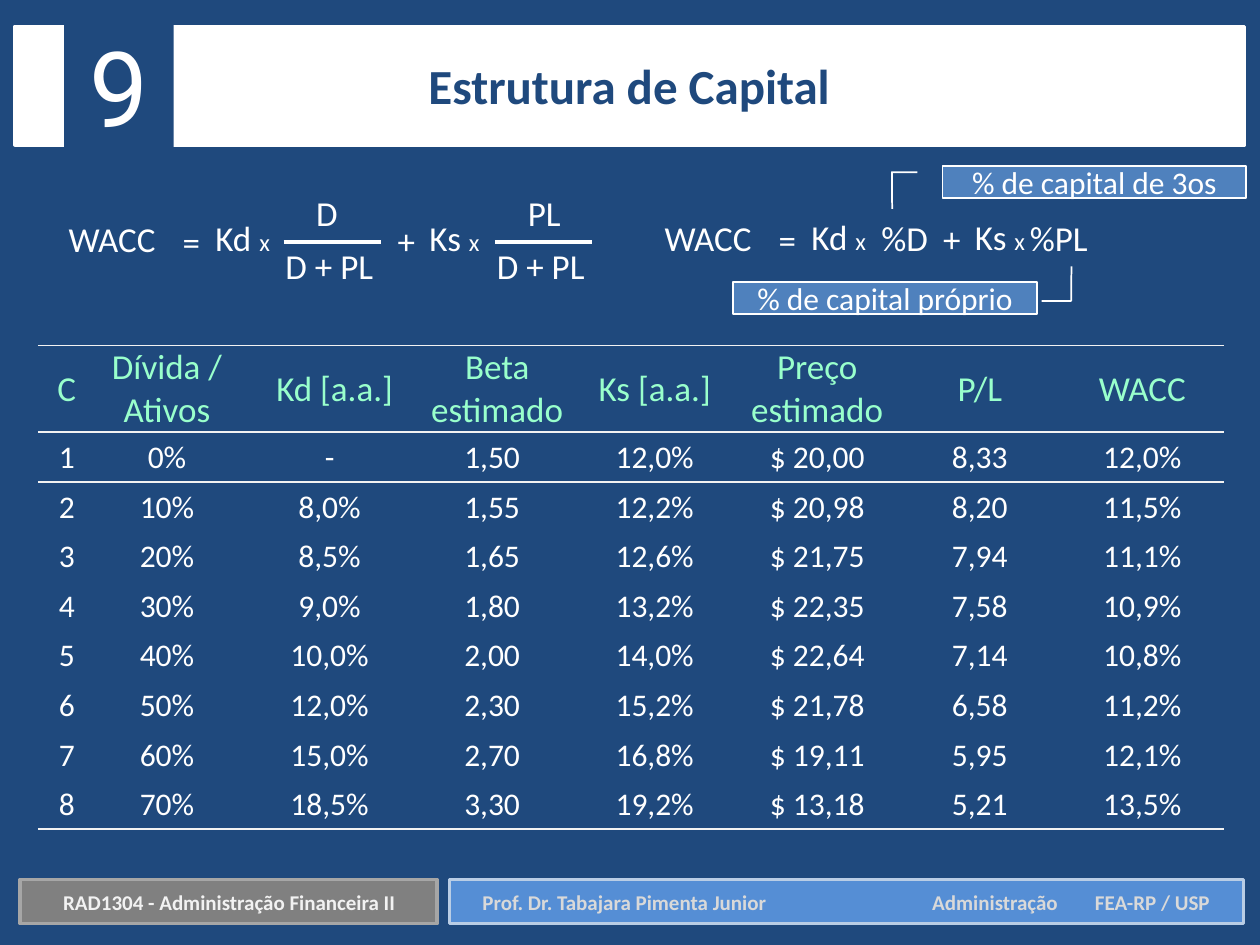
from lxml import etree
from pptx import Presentation
from pptx.dml.color import RGBColor
from pptx.enum.shapes import MSO_CONNECTOR, MSO_SHAPE
from pptx.enum.text import MSO_ANCHOR, PP_ALIGN
from pptx.oxml.ns import qn
from pptx.util import Pt

RECTANGLE, CALLOUT = MSO_SHAPE.RECTANGLE, MSO_SHAPE.LINE_CALLOUT_2
STRAIGHT = MSO_CONNECTOR.STRAIGHT
LEFT, CENTER = PP_ALIGN.LEFT, PP_ALIGN.CENTER
TOP, MIDDLE = MSO_ANCHOR.TOP, MSO_ANCHOR.MIDDLE
NO_STYLE = "{2D5ABB26-0587-4C30-8999-92F81FD0307C}"

THEME = {
    "font": "Calibri", "number_font": "Roboto",
    "navy": "1F497D", "white": "FFFFFF", "mint": "99FFCC", "rule": "F2F2F2",
    "callout": "4F81BD", "blue": "558ED5", "pale_blue": "B9CDE5",
    "gray": "808080", "light_gray": "A6A6A6", "author": "D9D9D9", "course": "F2F2F2",
    "number": 60, "title": 28, "formula": 20, "times": 14,
    "header": 20, "body": 18, "footer": 12,
}

# Content
TITLE, CHAPTER = "Estrutura de Capital", "9"
COURSE = "RAD1304 - Administração Financeira II"
AUTHOR = "Prof. Dr. Tabajara Pimenta Junior\tAdministração\tFEA-RP / USP"
AUTHOR_TABS = (257, 350)
HEADER = ["C", "Dívida / Ativos", "Kd [a.a.]", "Beta estimado",
          "Ks [a.a.]", "Preço estimado", "P/L", "WACC"]
ROWS = [
    ["1", "0%", "-", "1,50", "12,0%", "$ 20,00", "8,33", "12,0%"],
    ["2", "10%", "8,0%", "1,55", "12,2%", "$ 20,98", "8,20", "11,5%"],
    ["3", "20%", "8,5%", "1,65", "12,6%", "$ 21,75", "7,94", "11,1%"],
    ["4", "30%", "9,0%", "1,80", "13,2%", "$ 22,35", "7,58", "10,9%"],
    ["5", "40%", "10,0%", "2,00", "14,0%", "$ 22,64", "7,14", "10,8%"],
    ["6", "50%", "12,0%", "2,30", "15,2%", "$ 21,78", "6,58", "11,2%"],
    ["7", "60%", "15,0%", "2,70", "16,8%", "$ 19,11", "5,95", "12,1%"],
    ["8", "70%", "18,5%", "3,30", "19,2%", "$ 13,18", "5,21", "13,5%"],
]
# Formula terms: text, then left, top and width from the formula's origin
SHARED_TERMS = [("WACC ", 0, 0, 75), ("=", 66.6, 1.2, 28), ("Kd ", 86.4, -0.7, 47)]
FRACTION_TERMS = [("+", 189.4, 0.7, 28), ("Ks ", 207.4, -0.7, 47)]
PERCENT_TERMS = [("%D ", 126, 0, 43), ("+", 160.6, 0.7, 28),
                 ("Ks ", 178.6, -0.7, 47), ("%PL ", 210.2, 0, 55.5)]
FACTORS = ("Kd ", "Ks ")
# Fractions: numerator, its left and width, left of the bar
FRACTIONS = [("D ", 172.8, 28, 162), ("PL ", 293, 36, 282.8)]
CALLOUTS = [
    ("% de capital de 3os", 538.6, 95, (0.188, -0.083, 0.188, -0.167, 1.358, -0.166)),
    ("% de capital próprio", 419, 161.3, (0.595, 1.016, 0.595, 1.113, -0.505, 1.114)),
]


def color(name):
    return RGBColor.from_string(THEME[name])


def write(frame, runs, ink, align=CENTER, anchor=TOP, bold=False, font="font"):
    """Fill a text frame with one paragraph of (text, size name) runs."""
    frame.word_wrap = True
    frame.vertical_anchor = anchor
    paragraph = frame.paragraphs[0]
    paragraph.alignment = align
    paragraph.font.name = THEME[font]
    paragraph.font.bold = bold
    paragraph.font.color.rgb = color(ink)
    paragraph.font.size = Pt(THEME[runs[0][1]])
    for text, size in runs:
        run = paragraph.add_run()
        run.text = text
        if size != runs[0][1]:
            run.font.size = Pt(THEME[size])
    return paragraph


def add_text(shapes, box, runs, ink, **style):
    shape = shapes.add_textbox(*map(Pt, box))
    return write(shape.text_frame, runs, ink, **style)


def add_box(shapes, box, fill, line=None, width=2, kind=RECTANGLE):
    shape = shapes.add_shape(kind, *map(Pt, box))
    shape.shadow.inherit = False
    shape.fill.solid()
    shape.fill.fore_color.rgb = color(fill)
    if line:
        shape.line.color.rgb = color(line)
        shape.line.width = Pt(width)
    else:
        shape.line.fill.background()
    return shape


def add_terms(shapes, terms, left, top):
    for text, x, y, width in terms:
        runs = [(text, "formula")]
        if text in FACTORS:
            runs += [("x", "times"), (" ", "formula")]
        add_text(shapes, (left + x, top + y, width, 29), runs, "white")


def add_fraction(shapes, numerator, left, width, bar_left):
    add_text(shapes, (left, 105.8, width, 29), [(numerator, "formula")], "white")
    add_text(shapes, (bar_left - 13, 136, 83, 29), [("D + PL ", "formula")], "white")
    bar = shapes.add_connector(STRAIGHT, Pt(bar_left), Pt(138.2), Pt(bar_left + 55.6), Pt(138.2))
    bar.line.color.rgb = color("white")
    bar.line.width = Pt(2.25)
    etree.SubElement(bar._element.spPr, qn("a:effectLst"))


def add_rule(cell, side):
    """Draw the top (lnT) or bottom (lnB) border of a cell."""
    line = etree.Element(qn("a:" + side), w=str(Pt(1)))
    fill = etree.SubElement(line, qn("a:solidFill"))
    etree.SubElement(fill, qn("a:srgbClr"), val=THEME["rule"])
    cell._tc.get_or_add_tcPr().insert(0, line)


def add_capital_table(shapes):
    rows = [HEADER] + ROWS
    frame = shapes.add_table(len(rows), len(HEADER), Pt(21.6), Pt(197.3), Pt(677.5), Pt(276.4))
    table = frame.table
    table.first_row = table.horz_banding = False
    frame._element.find(".//" + qn("a:tableStyleId")).text = NO_STYLE
    for index, column in enumerate(table.columns):
        column.width = Pt(92.9 if index else 27.4)
    for i, values in enumerate(rows):
        table.rows[i].height = Pt(28.35 if i else 49.6)
        for j, text in enumerate(values):
            cell = table.cell(i, j)
            wide_inset = j == 0 or (i == 0 and j in (2, 3))
            cell.margin_left = Pt(6.5 if wide_inset else 0.7)
            cell.margin_top = cell.margin_right = Pt(0.7)
            cell.margin_bottom = 0
            cell.vertical_anchor = MIDDLE
            cell.fill.background()
            size, ink = ("body", "white") if i else ("header", "mint")
            write(cell.text_frame, [(text, size)], ink, anchor=MIDDLE)
            if i in (0, len(rows) - 1):
                add_rule(cell, "lnB")
            if i in (0, 1):
                add_rule(cell, "lnT")


def main():
    presentation = Presentation()
    presentation.slide_width, presentation.slide_height = Pt(720), Pt(540)
    slide = presentation.slides.add_slide(presentation.slide_layouts[6])
    slide.background.fill.solid()
    slide.background.fill.fore_color.rgb = color("navy")
    shapes = slide.shapes

    add_capital_table(shapes)

    # Title band and chapter number
    add_box(shapes, (8.6, 15.1, 702.7, 67.7), "white", "white")
    add_text(shapes, (167, 28, 385, 41), [(TITLE, "title")], "navy", bold=True)
    number = add_box(shapes, (36.7, 9.4, 62.6, 80), "navy")
    write(number.text_frame, [(CHAPTER, "number")], "white", font="number_font")

    # Footer
    footer = shapes.add_group_shape().shapes
    add_box(footer, (257, 502.6, 453.6, 25.2), "blue", "pale_blue")
    author = add_text(footer, (268.6, 504.7, 442, 21.6), [(AUTHOR, "footer")],
                      "author", align=LEFT, bold=True)
    tabs = etree.Element(qn("a:tabLst"))
    for position in AUTHOR_TABS:
        etree.SubElement(tabs, qn("a:tab"), pos=str(Pt(position)), algn="l")
    author._p.get_or_add_pPr().insert(0, tabs)
    add_box(footer, (11.5, 502.6, 238.3, 25.2), "gray", "light_gray")
    add_text(footer, (15.1, 504.7, 232, 21.6), [(COURSE, "footer")], "course", bold=True)

    # WACC with fractions
    formula = shapes.add_group_shape().shapes
    add_terms(formula, SHARED_TERMS + FRACTION_TERMS, 28.8, 121)
    for fraction in FRACTIONS:
        add_fraction(formula, *fraction)

    # WACC with percentages and its callouts
    add_terms(shapes, SHARED_TERMS + PERCENT_TERMS, 369.4, 120.2)
    for text, left, top, pointer in CALLOUTS:
        callout = add_box(shapes, (left, top, 173.5, 18), "callout", "white", 1, CALLOUT)
        for index, value in enumerate(pointer):
            callout.adjustments[index] = value
        write(callout.text_frame, [(text, "body")], "white", anchor=MIDDLE)

    presentation.save("out.pptx")


if __name__ == "__main__":
    main()
